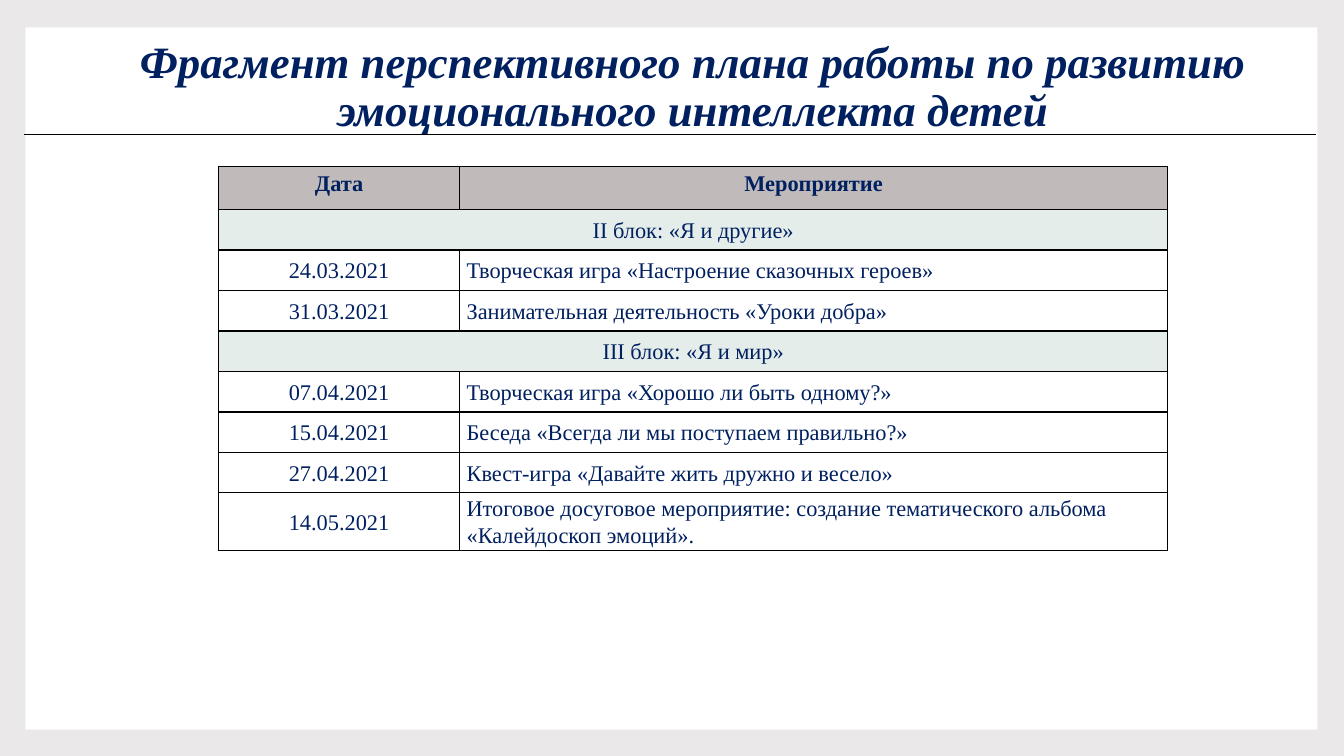
from dataclasses import dataclass

from lxml.etree import SubElement
from pptx import Presentation
from pptx.dml.color import RGBColor
from pptx.enum.shapes import MSO_CONNECTOR, MSO_SHAPE
from pptx.enum.text import MSO_ANCHOR, PP_ALIGN
from pptx.oxml.ns import qn
from pptx.util import Cm, Pt

TITLE = "Фрагмент перспективного плана работы по развитию эмоционального интеллекта детей"
HEADER = ("Дата", "Мероприятие")
BLOCKS = [
    ("II блок: «Я и другие»", [
        ("24.03.2021", "Творческая игра «Настроение сказочных героев»"),
        ("31.03.2021", "Занимательная деятельность «Уроки добра»"),
    ]),
    ("III блок: «Я и мир»", [
        ("07.04.2021", "Творческая игра «Хорошо ли быть одному?»"),
        ("15.04.2021", "Беседа «Всегда ли мы поступаем правильно?»"),
        ("27.04.2021", "Квест-игра «Давайте жить дружно и весело»"),
        ("14.05.2021", "Итоговое досуговое мероприятие: создание тематического альбома «Калейдоскоп эмоций»."),
    ]),
]
COLUMN_WIDTHS = (Cm(6.07), Cm(17.85))
HEADER_HEIGHT, ROW_HEIGHT, LAST_HEIGHT = Cm(1.09), Cm(1.02), Cm(1.35)


@dataclass(frozen=True)
class Theme:
    font: str = "Times New Roman"
    ink: str = "002060"
    line: str = "000000"
    backdrop: str = "EAE8E8"
    panel: str = "FFFFFF"
    header: str = "C0BABA"
    block: str = "E5EDEB"
    title_size: int = 32
    table_size: int = 16
    rule_width: float = 0.79
    border_width: float = 1


THEME = Theme()


def paint(fill, color):
    fill.solid()
    fill.fore_color.rgb = RGBColor.from_string(color)


def write(frame, text, size, align, spacing, bold=False, italic=False):
    frame.text = text
    para = frame.paragraphs[0]
    para.alignment = align
    para.line_spacing = spacing
    font = para.runs[0].font
    font.name = THEME.font
    font.size = Pt(size)
    font.bold = bold
    font.italic = italic
    font.color.rgb = RGBColor.from_string(THEME.ink)


def add_borders(cell):
    properties = cell._tc.get_or_add_tcPr()
    for side in ("lnL", "lnR", "lnT", "lnB"):
        border = SubElement(properties, qn(f"a:{side}"), w=str(Pt(THEME.border_width)))
        SubElement(SubElement(border, qn("a:solidFill")), qn("a:srgbClr"), val=THEME.line)


def fill_cell(cell, text, color, align=PP_ALIGN.CENTER, header=False):
    write(cell.text_frame, text, THEME.table_size, align, 1.0 if header else 1.07, bold=header)
    if not header:
        cell.vertical_anchor = MSO_ANCHOR.MIDDLE
        cell.margin_left = cell.margin_right = Cm(0.18)
        cell.margin_top = cell.margin_bottom = 0
    paint(cell.fill, color)


def add_frame(page):
    paint(page.background.fill, THEME.backdrop)
    panel = page.shapes.add_shape(MSO_SHAPE.RECTANGLE, Cm(0.64), Cm(0.69), Cm(32.56), Cm(17.7))
    panel.shadow.inherit = False
    paint(panel.fill, THEME.panel)
    panel.line.fill.background()


def add_title(page):
    box = page.shapes.add_textbox(Cm(2.24), Cm(1.22), Cm(30.45), Cm(2.01))
    frame = box.text_frame
    frame.word_wrap = True
    frame.vertical_anchor = MSO_ANCHOR.MIDDLE
    write(frame, TITLE, THEME.title_size, PP_ALIGN.CENTER, 0.9, bold=True, italic=True)


def add_rule(page):
    rule = page.shapes.add_connector(MSO_CONNECTOR.STRAIGHT, Cm(0.61), Cm(3.38), Cm(33.17), Cm(3.38))
    rule.line.color.rgb = RGBColor.from_string(THEME.line)
    rule.line.width = Pt(THEME.rule_width)
    SubElement(rule._element.spPr, qn("a:effectLst"))


def add_plan(page):
    rows = [HEADER]
    for block, events in BLOCKS:
        rows += [(block,), *events]
    heights = [HEADER_HEIGHT] + [ROW_HEIGHT] * (len(rows) - 2) + [LAST_HEIGHT]
    table = page.shapes.add_table(
        len(rows), len(COLUMN_WIDTHS), Cm(5.51), Cm(4.19), sum(COLUMN_WIDTHS), sum(heights)
    ).table
    table.first_row = table.horz_banding = False
    for column, width in zip(table.columns, COLUMN_WIDTHS):
        column.width = width
    for cell in table.iter_cells():
        add_borders(cell)
    for index, (texts, height) in enumerate(zip(rows, heights)):
        table.rows[index].height = height
        date_cell, event_cell = table.rows[index].cells
        if len(texts) == 1:
            date_cell.merge(event_cell)
            fill_cell(date_cell, texts[0], THEME.block)
        elif texts is HEADER:
            for cell, text in zip((date_cell, event_cell), texts):
                fill_cell(cell, text, THEME.header, header=True)
        else:
            fill_cell(date_cell, texts[0], THEME.panel)
            fill_cell(event_cell, texts[1], THEME.panel, PP_ALIGN.LEFT)


def main():
    deck = Presentation()
    deck.slide_width, deck.slide_height = Cm(33.87), Cm(19.05)
    page = deck.slides.add_slide(deck.slide_layouts[6])
    add_frame(page)
    add_title(page)
    add_rule(page)
    add_plan(page)
    deck.save("out.pptx")


if __name__ == "__main__":
    main()
